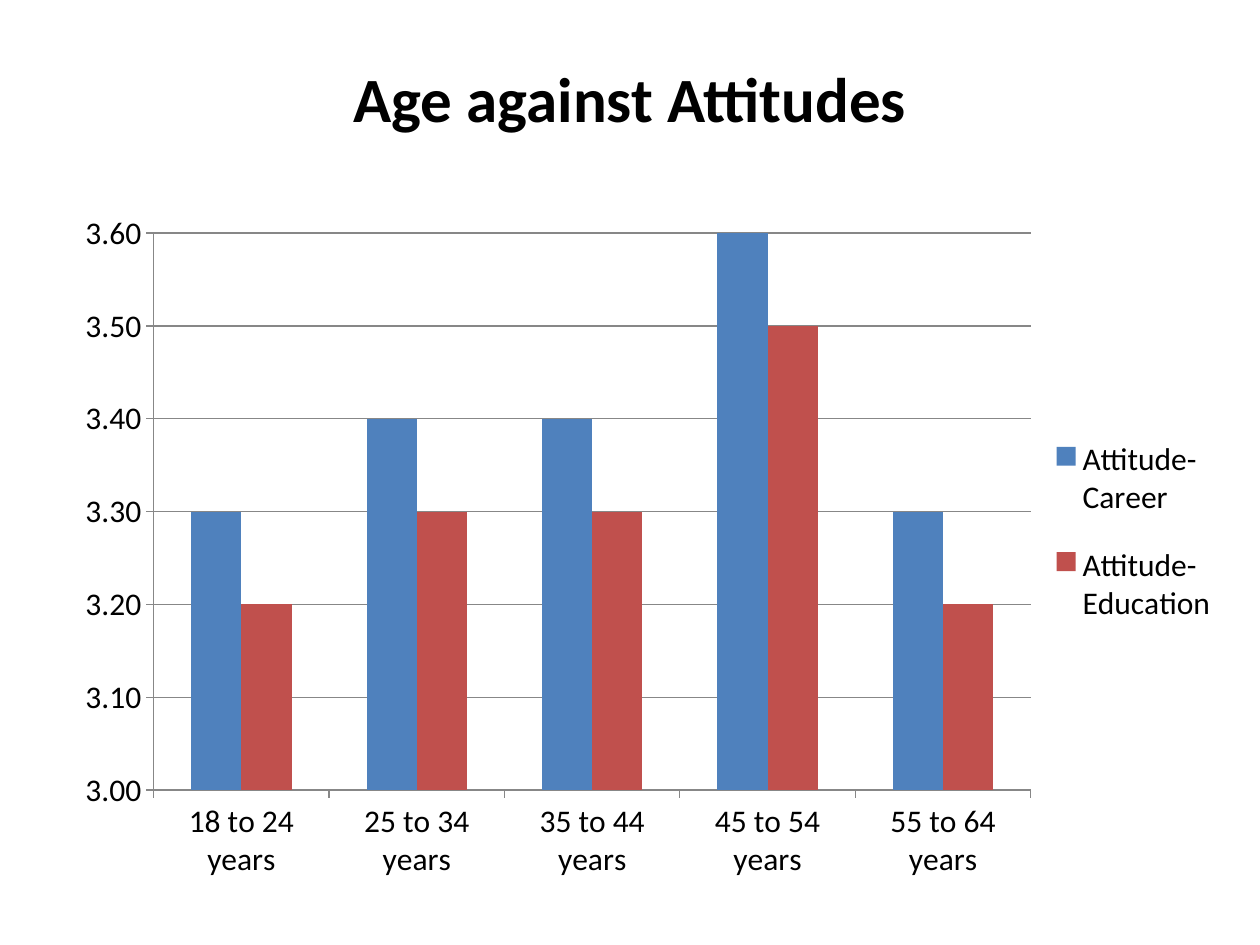
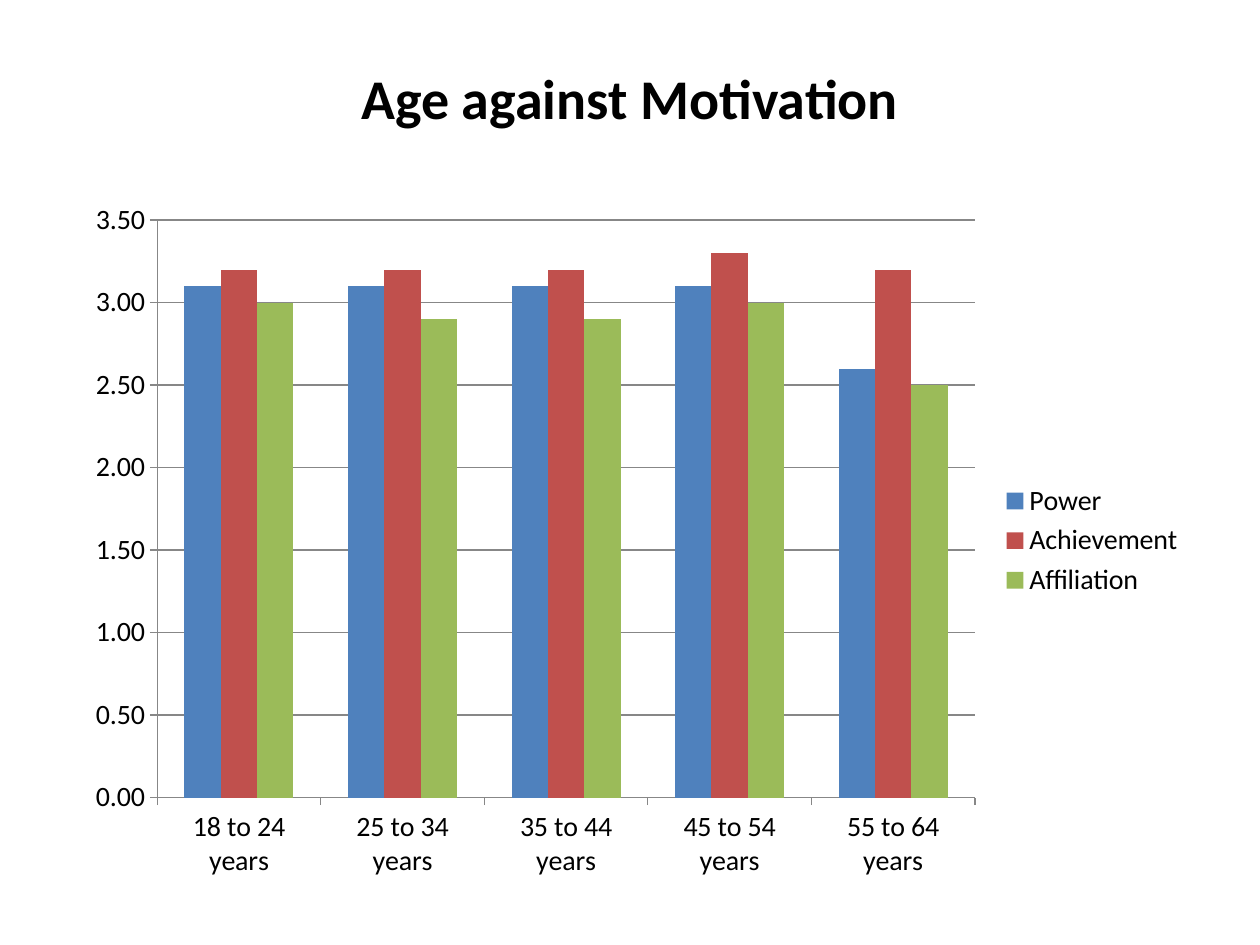
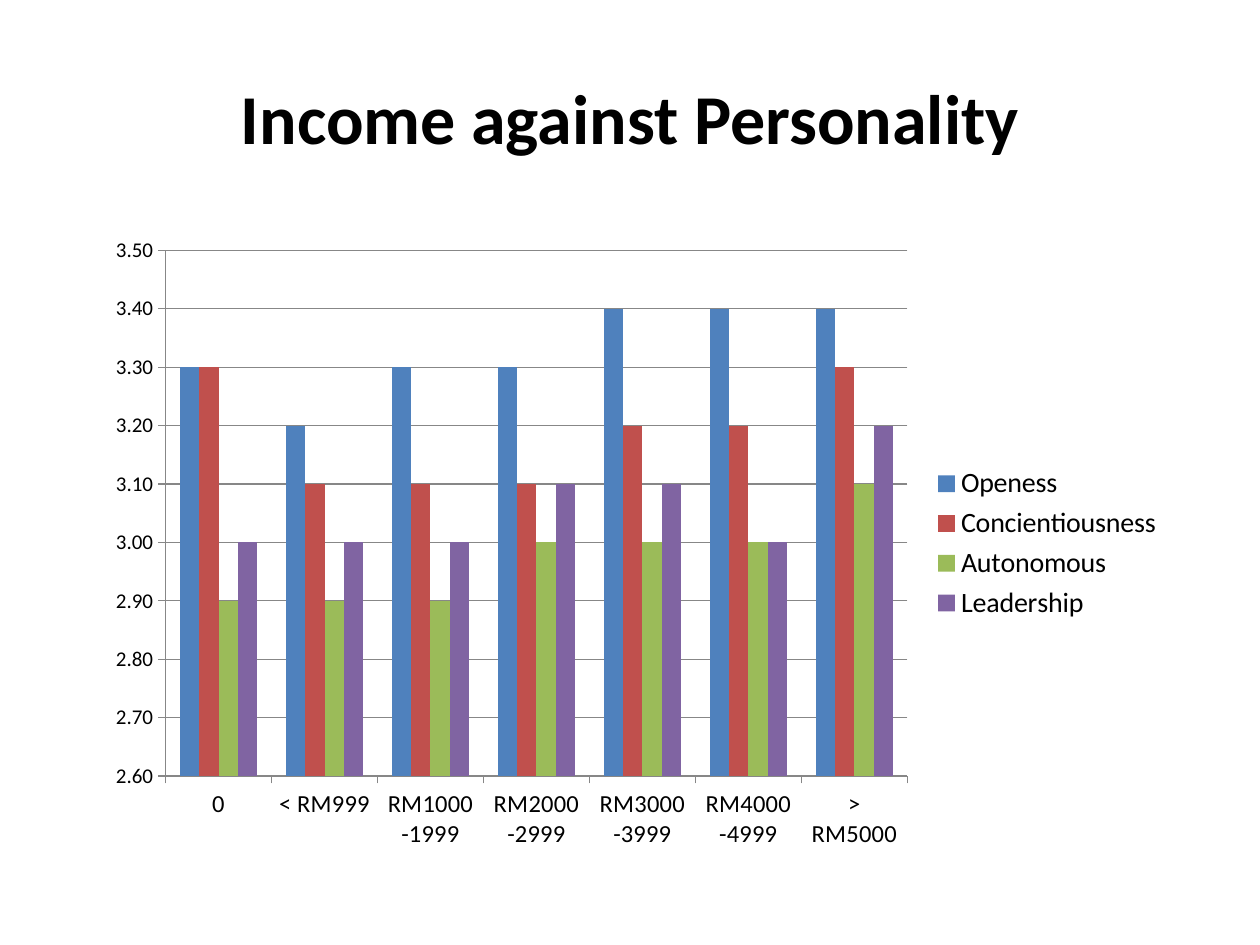
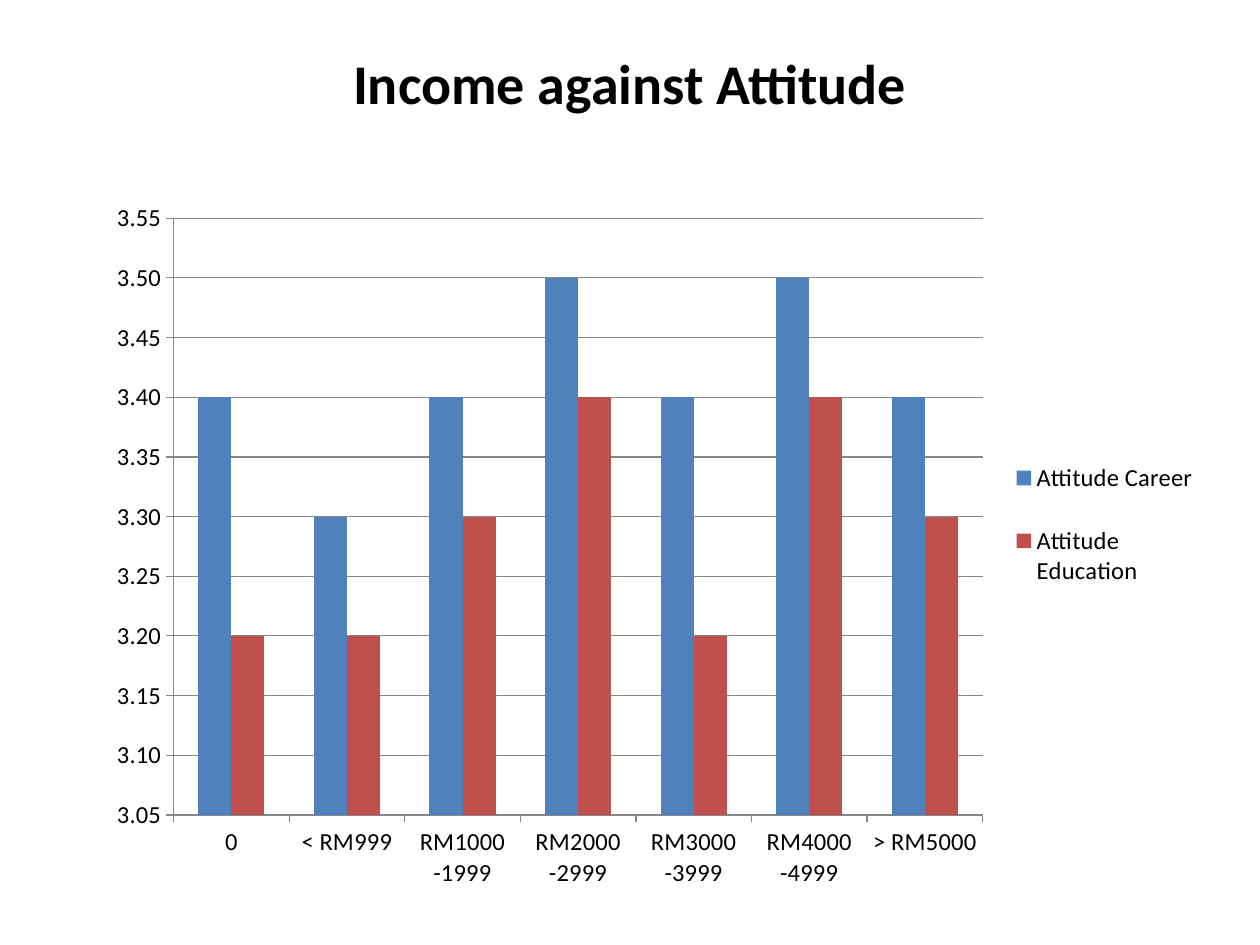
from dataclasses import dataclass

from pptx import Presentation
from pptx.chart.data import CategoryChartData
from pptx.dml.color import RGBColor
from pptx.enum.chart import XL_CHART_TYPE as ChartType
from pptx.enum.chart import XL_LEGEND_POSITION as LegendPos
from pptx.enum.chart import XL_TICK_MARK as Tick
from pptx.enum.text import MSO_ANCHOR as Anchor
from pptx.enum.text import PP_ALIGN as Align
from pptx.oxml import parse_xml
from pptx.oxml.ns import nsdecls
from pptx.util import Cm, Pt


@dataclass(frozen=True)
class Theme:
    """Colours, font and sizes shared by all slides."""
    font: str = "Calibri"
    text: RGBColor = RGBColor(0, 0, 0)
    background: RGBColor = RGBColor(255, 255, 255)
    grid: RGBColor = RGBColor(0x87, 0x87, 0x87)
    series: tuple = tuple(
        RGBColor.from_string(c) for c in ("4F81BD", "C0504D", "9BBB59", "8064A2")
    )
    base: int = 10
    line: float = 0.75
    gap: int = 150


THEME = Theme()
AGES = [f"{low} to {high} years"
        for low, high in ((18, 24), (25, 34), (35, 44), (45, 54), (55, 64))]
INCOMES = ["0", "< RM999",
           *(f"RM{low} -{low + 999}" for low in range(1000, 5000, 1000)),
           "> RM5000"]


@dataclass(frozen=True)
class ChartSlide:
    """Content and measures of one chart slide, with lengths in centimetres."""
    title: str
    title_size: int
    title_height: float
    box: tuple
    cats: list
    series: dict
    scale: tuple
    cat_size: int
    val_size: int
    legend_size: int
    number_format: str
    plot_box: tuple = ()
    legend_box: tuple = ()


SLIDES = [
    ChartSlide(
        "Age against Attitudes", 36, 2.41, (1.27, 4.02, 23.7, 13.97), AGES,
        {"Attitude-Career": (3.3, 3.4, 3.4, 3.6, 3.3),
         "Attitude-Education": (3.2, 3.3, 3.3, 3.5, 3.2)},
        (3, 3.6, 0.1), 18, 18, 18, "0.00",
        (3.1, 4.7, 17.68, 11.23), (21, 8.29, 3.7, 4.84)),
    ChartSlide(
        "Age against Motivation", 32, 2.41, (1.48, 3.81, 22.65, 14.18), AGES,
        {"Power": (3.1, 3.1, 3.1, 3.1, 2.6),
         "Achievement": (3.2, 3.2, 3.2, 3.3, 3.2),
         "Affiliation": (3, 2.9, 2.9, 3, 2.5)},
        (0, 3.5, 0.5), 16, 16, 16, "0.00"),
    ChartSlide(
        "Income against Personality", 40, 3.18, (1.9, 4.54, 21.8, 12.83), INCOMES,
        {"Openess": (3.3, 3.2, 3.3, 3.3, 3.4, 3.4, 3.4),
         "Concientiousness": (3.3, 3.1, 3.1, 3.1, 3.2, 3.2, 3.3),
         "Autonomous": (2.9, 2.9, 2.9, 3, 3, 3, 3.1),
         "Leadership": (3, 3, 3, 3.1, 3.1, 3, 3.2)},
        (2.6, 3.5, 0.1), 14, 12, 16, "###0.00"),
    ChartSlide(
        "Income against Attitude", 32, 1.78, (1.9, 3.81, 22.43, 14.4), INCOMES,
        {"Attitude Career": (3.4, 3.3, 3.4, 3.5, 3.4, 3.5, 3.4),
         "Attitude Education": (3.2, 3.2, 3.3, 3.4, 3.2, 3.4, 3.3)},
        (3.05, 3.55, 0.05), 14, 14, 14, "###0.00",
        (3.5, 4.4, 16.31, 12.03), (20.24, 8.67, 4.05, 3.81)),
]


def style_font(font, size, bold=False):
    """Apply the theme font and colour at the given size."""
    font.name, font.size, font.bold = THEME.font, Pt(size), bold
    font.color.rgb = THEME.text


def style_line(line):
    """Apply the thin grey line of axes and gridlines."""
    line.color.rgb = THEME.grid
    line.width = Pt(THEME.line)


def set_title(s, text, size, height):
    """Fill, place and format the title placeholder."""
    sp = s.shapes.title
    sp.left, sp.top, sp.width, sp.height = Cm(1.27), Cm(0.76), Cm(22.86), Cm(height)
    tf = sp.text_frame
    tf.text = text
    tf.vertical_anchor = Anchor.MIDDLE
    p = tf.paragraphs[0]
    p.alignment = Align.CENTER
    style_font(p.runs[0].font, size, bold=True)


def style_axis(axis, size):
    """Give an axis its ticks, line and label font."""
    axis.major_tick_mark = Tick.OUTSIDE
    axis.minor_tick_mark = Tick.NONE
    style_line(axis.format.line)
    style_font(axis.tick_labels.font, size)


def style_value_axis(axis, scale, number_format):
    """Set the scale, gridlines and number format of the value axis."""
    axis.minimum_scale, axis.maximum_scale, axis.major_unit = scale
    axis.has_major_gridlines = True
    style_line(axis.major_gridlines.format.line)
    axis.tick_labels.number_format = number_format
    axis.tick_labels.number_format_is_linked = False


def add_legend(chart, size):
    """Show the legend to the right of the plot."""
    chart.has_legend = True
    chart.legend.position = LegendPos.RIGHT
    chart.legend.include_in_layout = False
    style_font(chart.legend.font, size)


def set_layout(parent, index, box, chart_box, target=""):
    """Fix a chart part at a box given in slide centimetres."""
    left, top, width, height = chart_box
    x, y, w, h = box
    parts = {"x": (x - left) / width, "y": (y - top) / height,
             "w": w / width, "h": h / height}
    modes = "".join(f'<c:{k}Mode val="edge"/>' for k in "xy")
    values = "".join(f'<c:{k} val="{v:.4f}"/>' for k, v in parts.items())
    for old in parent.xpath("c:layout"):
        parent.remove(old)
    parent.insert(index, parse_xml(
        f'<c:layout {nsdecls("c")}><c:manualLayout>{target}{modes}{values}'
        '</c:manualLayout></c:layout>'))


def add_column_chart(s, content):
    """Add the clustered column chart of one slide."""
    data = CategoryChartData(number_format=content.number_format)
    data.categories = content.cats
    for name, values in content.series.items():
        data.add_series(name, values)
    chart = s.shapes.add_chart(
        ChartType.COLUMN_CLUSTERED, *map(Cm, content.box), data).chart
    chart.has_title = False
    style_font(chart.font, THEME.base)
    plot = chart.plots[0]
    plot.gap_width, plot.overlap, plot.vary_by_categories = THEME.gap, 0, False
    for series, color in zip(plot.series, THEME.series):
        series.format.fill.solid()
        series.format.fill.fore_color.rgb = color
        series.invert_if_negative = False
    style_axis(chart.category_axis, content.cat_size)
    style_axis(chart.value_axis, content.val_size)
    style_value_axis(chart.value_axis, content.scale, content.number_format)
    add_legend(chart, content.legend_size)
    if content.plot_box:
        area, = chart._chartSpace.xpath("c:chart/c:plotArea")
        set_layout(area, 0, content.plot_box, content.box,
                   '<c:layoutTarget val="inner"/>')
    if content.legend_box:
        legend, = chart._chartSpace.xpath("c:chart/c:legend")
        set_layout(legend, 1, content.legend_box, content.box)


def main():
    """Build the chart slides and save the presentation."""
    prs = Presentation()
    prs.slide_width, prs.slide_height = Cm(25.4), Cm(19.05)
    fill = prs.slide_master.background.fill
    fill.solid()
    fill.fore_color.rgb = THEME.background
    title_only = prs.slide_layouts.get_by_name("Title Only")
    for content in SLIDES:
        s = prs.slides.add_slide(title_only)
        set_title(s, content.title, content.title_size, content.title_height)
        add_column_chart(s, content)
    prs.save("out.pptx")


if __name__ == "__main__":
    main()
